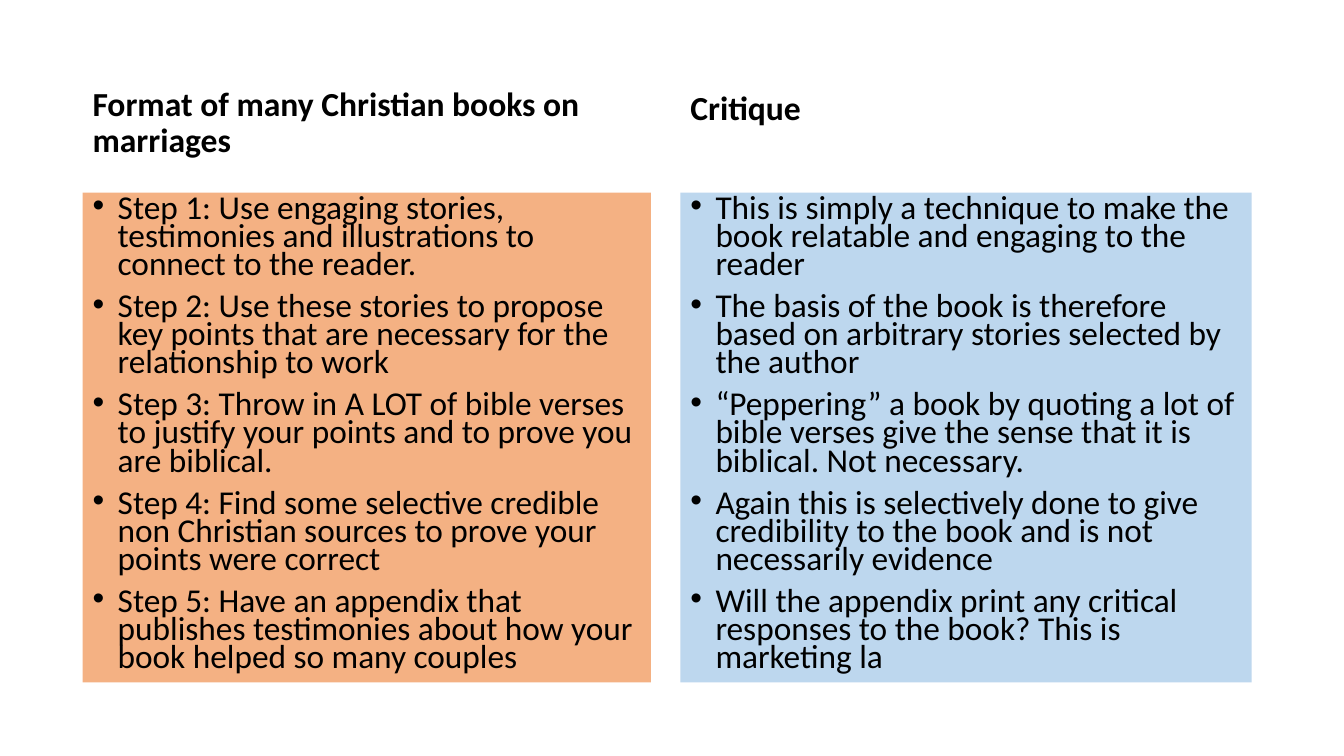
from dataclasses import dataclass

from lxml.etree import SubElement
from pptx import Presentation
from pptx.dml.color import RGBColor
from pptx.enum.text import MSO_ANCHOR as Anchor
from pptx.oxml.ns import qn
from pptx.util import Pt

BODY_TOP, BODY_HEIGHT = 137.5, 350
BULLET_INDENT = 18
HEADING_FONT = {"name": "Calibri", "size": Pt(24), "bold": True}
BODY_FONT = {"name": "Calibri", "size": Pt(23.8), "bold": False}
HEADING_SPACING = {"line_spacing": 0.9, "space_before": Pt(10)}
BODY_SPACING = {"line_spacing": 0.7, "space_before": Pt(10)}


@dataclass(frozen=True)
class Column:
    left: float
    width: float
    heading_top: float
    heading_height: float
    fill: str
    heading: str
    points: tuple[str, ...]


COLUMNS = (
    Column(
        59, 406, 52.5, 65, "F4B183",
        "Format of many Christian books on marriages",
        (
            "Step 1: Use engaging stories, testimonies and illustrations to connect to the reader.",
            "Step 2: Use these stories to propose key points that are necessary for the relationship to work",
            "Step 3: Throw in A LOT of bible verses to justify your points and to prove you are biblical.",
            "Step 4: Find some selective credible non Christian sources to prove your points were correct",
            "Step 5: Have an appendix that publishes testimonies about how your book helped so many couples",
        ),
    ),
    Column(
        486, 408, 42.5, 52.5, "BDD7EE",
        "Critique",
        (
            "This is simply a technique to make the book relatable and engaging to the reader",
            "The basis of the book is therefore based on arbitrary stories selected by the author",
            "“Peppering” a book by quoting a lot of bible verses give the sense that it is biblical. Not necessary.",
            "Again this is selectively done to give credibility to the book and is not necessarily evidence",
            "Will the appendix print any critical responses to the book? This is marketing la",
        ),
    ),
)


def color(value: str) -> RGBColor:
    return RGBColor.from_string(value)


def apply(target, values: dict) -> None:
    for name, value in values.items():
        setattr(target, name, value)


def add_bullet(para) -> None:
    properties = para._p.get_or_add_pPr()
    properties.set("marL", str(Pt(BULLET_INDENT)))
    properties.set("indent", str(-Pt(BULLET_INDENT)))
    SubElement(properties, qn("a:buFont")).set("typeface", "Arial")
    SubElement(properties, qn("a:buChar")).set("char", "•")


def add_text(page, left: float, top: float, width: float, height: float,
             lines: tuple[str, ...], font: dict, spacing: dict, anchor: Anchor):
    box = page.shapes.add_textbox(Pt(left), Pt(top), Pt(width), Pt(height))
    frame = box.text_frame
    apply(frame, {"word_wrap": True, "vertical_anchor": anchor})
    for index, line in enumerate(lines):
        para = frame.add_paragraph() if index else frame.paragraphs[0]
        apply(para, spacing)
        span = para.add_run()
        span.text = line
        apply(span.font, font)
        span.font.color.rgb = color("000000")
    return box


def add_column(page, column: Column) -> None:
    add_text(page, column.left, column.heading_top, column.width, column.heading_height,
             (column.heading,), HEADING_FONT, HEADING_SPACING, Anchor.BOTTOM)
    box = add_text(page, column.left, BODY_TOP, column.width, BODY_HEIGHT,
                   column.points, BODY_FONT, BODY_SPACING, Anchor.TOP)
    box.fill.solid()
    box.fill.fore_color.rgb = color(column.fill)
    for para in box.text_frame.paragraphs:
        add_bullet(para)


def main() -> None:
    deck = Presentation()
    apply(deck, {"slide_width": Pt(960), "slide_height": Pt(540)})
    page = deck.slides.add_slide(deck.slide_layouts[6])
    for column in COLUMNS:
        add_column(page, column)
    deck.save("out.pptx")


if __name__ == "__main__":
    main()
